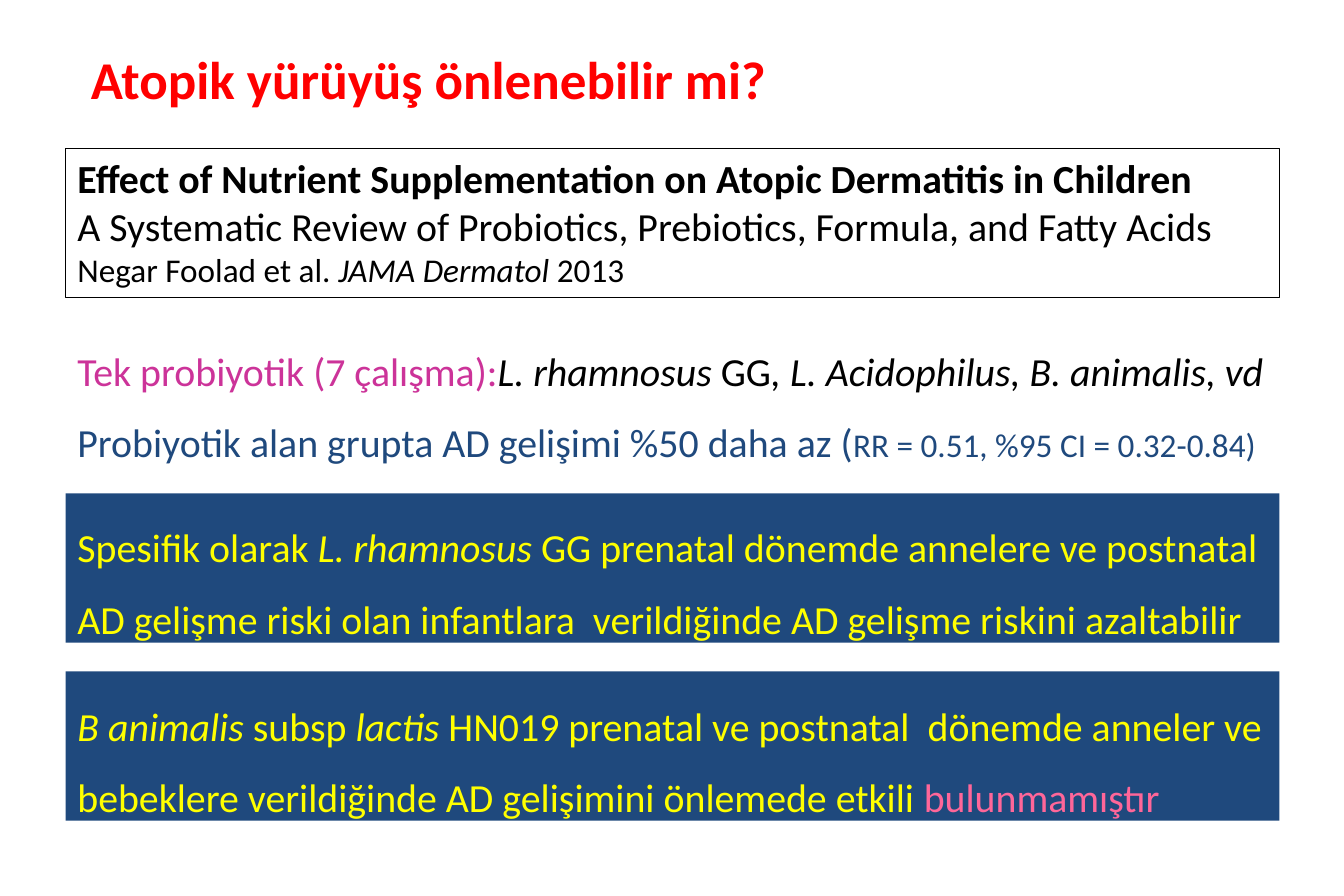
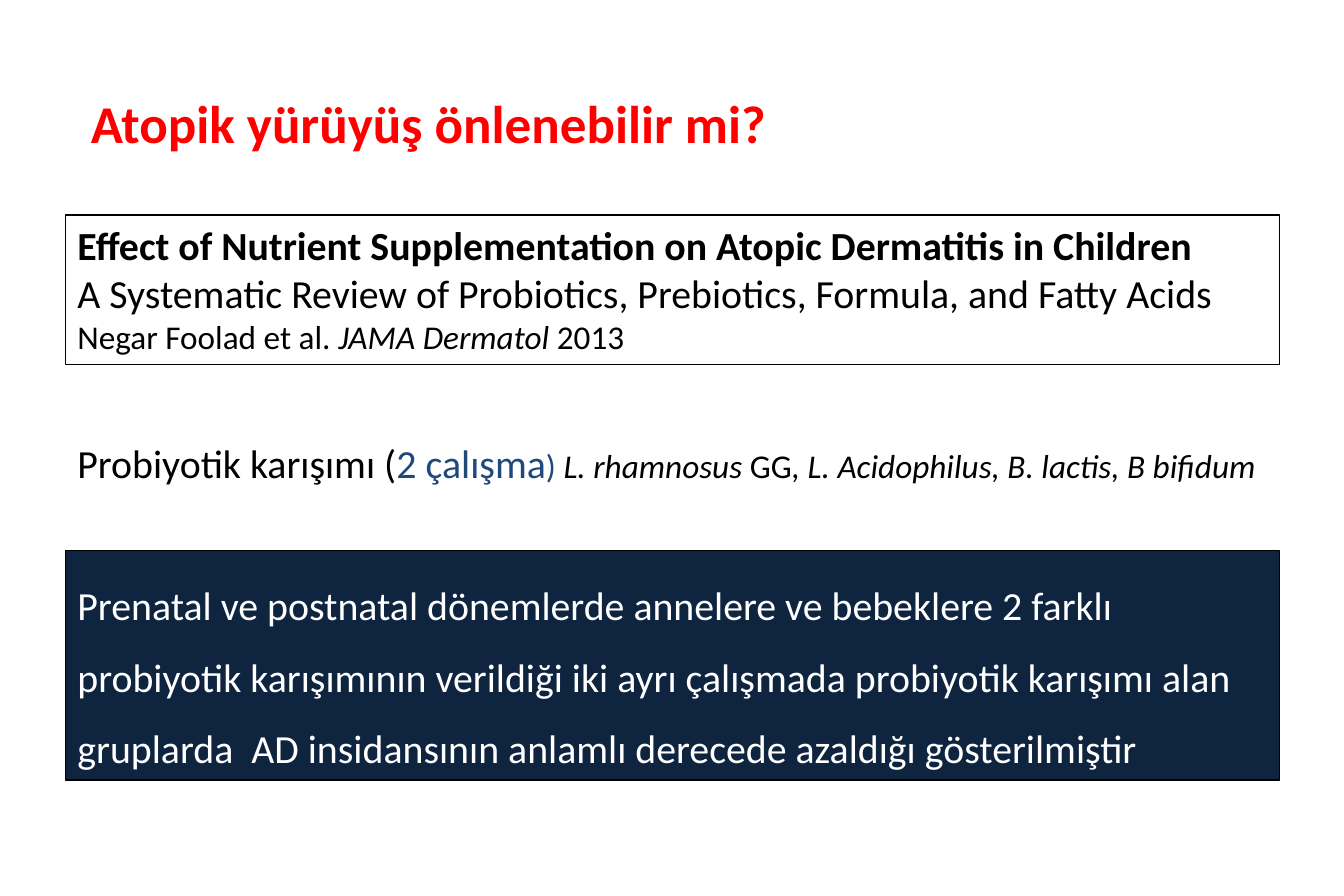
from dataclasses import dataclass

from pptx import Presentation
from pptx.dml.color import RGBColor
from pptx.enum.shapes import MSO_SHAPE
from pptx.enum.text import MSO_ANCHOR, MSO_AUTO_SIZE, PP_ALIGN
from pptx.util import Inches, Pt

BLACK = RGBColor(0x00, 0x00, 0x00)
WHITE = RGBColor(0xFF, 0xFF, 0xFF)
RED = RGBColor(0xFF, 0x00, 0x00)
BLUE = RGBColor(0x1F, 0x49, 0x7D)
NAVY = RGBColor(0x0F, 0x24, 0x3E)
YELLOW = RGBColor(0xFF, 0xFF, 0x00)
MAGENTA = RGBColor(0xCC, 0x33, 0x99)
PINK = RGBColor(0xFF, 0x66, 0x99)

FONT = "Calibri"
TITLE = "Atopik yürüyüş önlenebilir mi?"
LEFT, WIDTH = 0.55, 10.16
TWO_LINE_HEIGHT = 1.25


@dataclass
class Piece:
    """A stretch of text with one format."""
    text: str
    color: RGBColor = BLACK
    size: int = 24
    bold: bool = False
    italic: bool = False


CITATION = [
    [Piece("Effect of Nutrient Supplementation on Atopic Dermatitis in Children", bold=True)],
    [Piece("A Systematic Review of Probiotics, Prebiotics, Formula, and Fatty Acids")],
    [Piece("Negar Foolad et al. ", size=20),
     Piece("JAMA Dermatol ", size=20, italic=True),
     Piece("2013", size=20)],
]
SINGLE_PROBIOTIC = [
    [Piece("Tek probiyotik (7 çalışma):", MAGENTA),
     Piece("L. rhamnosus", italic=True),
     Piece(" GG"),
     Piece(", L. Acidophilus, B. animalis, vd", italic=True)],
    [Piece("Probiyotik alan grupta AD gelişimi %50 daha az (", BLUE),
     Piece("RR = 0.51, %95 CI = 0.32-0.84)", BLUE, 20)],
]
RHAMNOSUS_RESULT = [
    [Piece("Spesifik olarak ", YELLOW),
     Piece("L. rhamnosus", YELLOW, italic=True),
     Piece(" GG prenatal dönemde annelere ve postnatal AD gelişme riski olan infantlara  "
           "verildiğinde AD gelişme riskini azaltabilir", YELLOW)],
]
ANIMALIS_RESULT = [
    [Piece("B animalis ", YELLOW, italic=True),
     Piece("subsp ", YELLOW),
     Piece("lactis", YELLOW, italic=True),
     Piece(" HN019 prenatal ve postnatal  dönemde anneler ve bebeklere verildiğinde "
           "AD gelişimini önlemede etkili ", YELLOW),
     Piece("bulunmamıştır", PINK)],
]
PROBIOTIC_MIXTURE = [
    [Piece("Probiyotik karışımı ("),
     Piece("2 çalışma", BLUE),
     Piece(") ", BLUE, 20),
     Piece("L. rhamnosus", size=20, italic=True),
     Piece(" GG", size=20),
     Piece(", L. Acidophilus, B. lactis, B bifidum", size=20, italic=True)],
]
MIXTURE_RESULT = [
    [Piece("Prenatal ve postnatal dönemlerde annelere ve bebeklere 2 farklı probiyotik "
           "karışımının verildiği iki ayrı çalışmada probiyotik karışımı alan gruplarda  "
           "AD insidansının anlamlı derecede azaldığı gösterilmiştir", WHITE)],
]


def write_paragraphs(text_frame, paragraphs, line_spacing):
    """Fill a text frame with left-aligned paragraphs of formatted pieces."""
    text_frame.word_wrap = True
    text_frame.vertical_anchor = MSO_ANCHOR.TOP
    text_frame.auto_size = MSO_AUTO_SIZE.SHAPE_TO_FIT_TEXT
    for index, pieces in enumerate(paragraphs):
        paragraph = text_frame.add_paragraph() if index else text_frame.paragraphs[0]
        paragraph.alignment = PP_ALIGN.LEFT
        paragraph.line_spacing = line_spacing
        for piece in pieces:
            run = paragraph.add_run()
            run.text = piece.text
            run.font.name = FONT
            run.font.size = Pt(piece.size)
            run.font.bold = piece.bold
            run.font.italic = piece.italic
            run.font.color.rgb = piece.color


def add_titled_slide(presentation, top, height):
    """Add a slide with the shared red title at the given height."""
    slide = presentation.slides.add_slide(presentation.slide_layouts[5])
    title = slide.shapes.title
    title.left, title.top = Inches(0.56), Inches(top)
    title.width, title.height = Inches(10.12), Inches(height)
    text_frame = title.text_frame
    text_frame.text = TITLE
    text_frame.margin_left = Inches(0.2)
    text_frame.vertical_anchor = MSO_ANCHOR.MIDDLE
    paragraph = text_frame.paragraphs[0]
    paragraph.alignment = PP_ALIGN.LEFT
    font = paragraph.runs[0].font
    font.name, font.size, font.bold = FONT, Pt(32), True
    font.color.rgb = RED
    return slide


def add_panel(slide, top, height, paragraphs, fill=None, outlined=False, line_spacing=1.5):
    """Add a full-width rectangle with text, optionally filled or outlined."""
    panel = slide.shapes.add_shape(
        MSO_SHAPE.RECTANGLE, Inches(LEFT), Inches(top), Inches(WIDTH), Inches(height))
    panel.shadow.inherit = False
    if fill is None:
        panel.fill.background()
    else:
        panel.fill.solid()
        panel.fill.fore_color.rgb = fill
    if outlined:
        panel.line.color.rgb = BLACK
        panel.line.width = Pt(0.75)
    else:
        panel.line.fill.background()
    write_paragraphs(panel.text_frame, paragraphs, line_spacing)


def add_citation(slide, top):
    """Add the outlined reference to the reviewed article."""
    add_panel(slide, top, TWO_LINE_HEIGHT, CITATION, outlined=True, line_spacing=1.0)


def add_statement(slide, top, height, paragraphs):
    """Add a full-width text box."""
    box = slide.shapes.add_textbox(
        Inches(LEFT), Inches(top), Inches(WIDTH), Inches(height))
    write_paragraphs(box.text_frame, paragraphs, 1.5)


def build_single_probiotic_slide(presentation):
    """Build the slide on single probiotics."""
    slide = add_titled_slide(presentation, 0.23, 0.85)
    add_citation(slide, 1.24)
    add_statement(slide, 2.65, 1.31, SINGLE_PROBIOTIC)
    for top, result in ((4.13, RHAMNOSUS_RESULT), (5.62, ANIMALIS_RESULT)):
        add_panel(slide, top, TWO_LINE_HEIGHT, result, fill=BLUE)


def build_mixture_slide(presentation):
    """Build the slide on probiotic mixtures."""
    slide = add_titled_slide(presentation, 0.55, 0.94)
    add_citation(slide, 1.8)
    add_statement(slide, 3.42, 0.64, PROBIOTIC_MIXTURE)
    add_panel(slide, 4.61, 1.92, MIXTURE_RESULT, fill=NAVY, outlined=True)


def main():
    """Build and save the presentation."""
    presentation = Presentation()
    presentation.slide_width = Inches(11.25)
    presentation.slide_height = Inches(7.5)
    build_single_probiotic_slide(presentation)
    build_mixture_slide(presentation)
    presentation.save("out.pptx")


if __name__ == "__main__":
    main()
